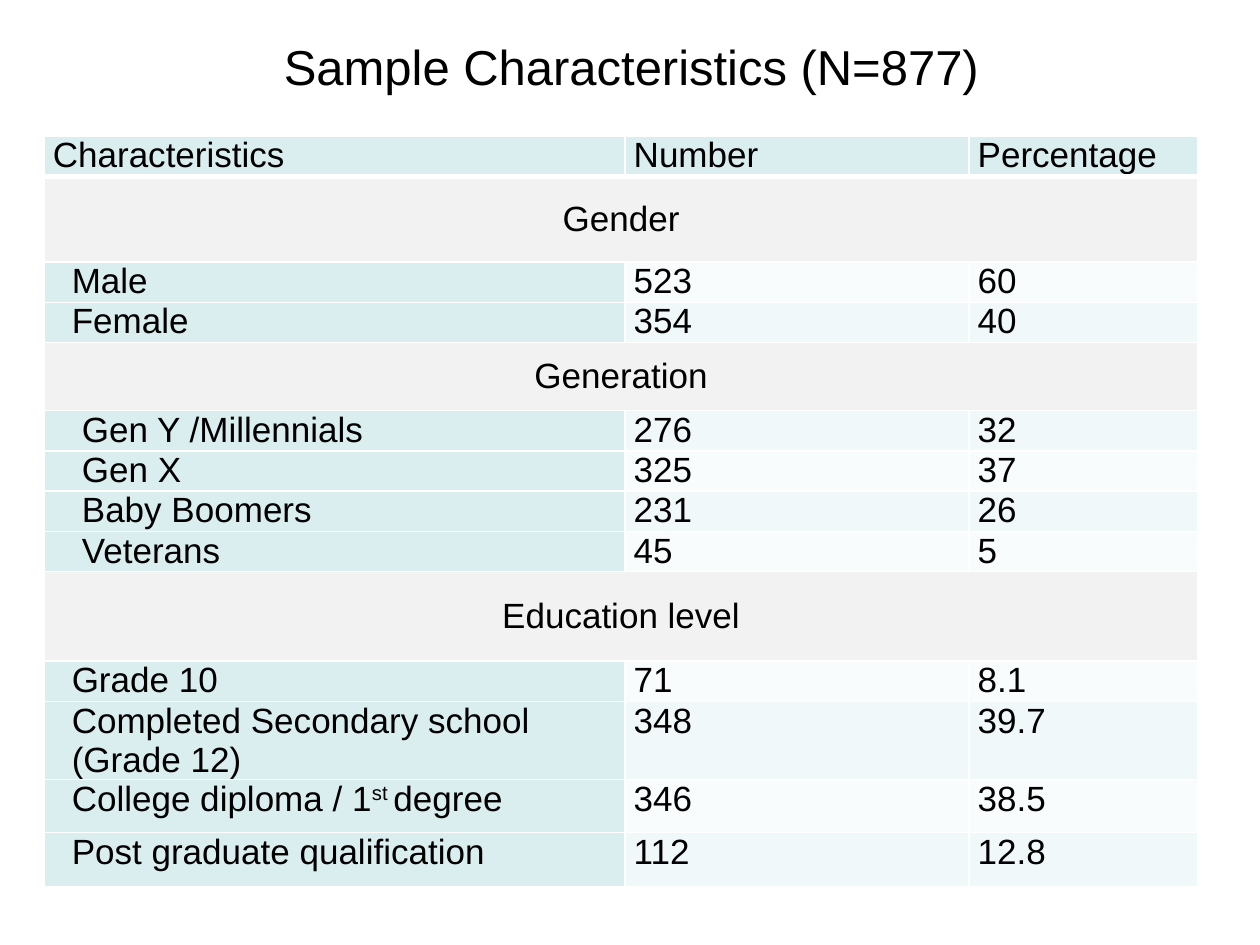
from lxml import etree
from pptx import Presentation, util as u
from pptx.dml.color import RGBColor
from pptx.enum import text
from pptx.oxml import ns

FONT = "Arial"
BLACK = RGBColor(0x00, 0x00, 0x00)
WHITE = RGBColor(0xFF, 0xFF, 0xFF)
TEAL = RGBColor(0xDA, 0xED, 0xEF)
GREY = RGBColor(0xF2, 0xF2, 0xF2)
BANDS = (RGBColor(0xF8, 0xFC, 0xFC), RGBColor(0xF1, 0xF8, 0xF9))

MARGIN = 0.07
COLUMNS = (4.61, 2.73, 1.82)
LINE = 0.32  # height of a one-line row
HEADINGS = ("Characteristics", "Number", "Percentage")

# Section: name, row height, label indent, then (label, number, percentage, height)
SECTIONS = (
    ("Gender", 0.68, 0.15, (
        ("Male", "523", "60", LINE),
        ("Female", "354", "40", LINE))),
    ("Generation", 0.54, 0.23, (
        ("Gen Y /Millennials", "276", "32", LINE),
        ("Gen X", "325", "37", LINE),
        ("Baby Boomers", "231", "26", LINE),
        ("Veterans", "45", "5", LINE))),
    ("Education level", 0.71, 0.15, (
        ("Grade 10", "71", "8.1", LINE),
        ("Completed Secondary school\n(Grade 12)", "348", "39.7", 0.61),
        ("College diploma / 1^st ^degree", "346", "38.5", 0.42),
        ("Post graduate qualification", "112", "12.8", 0.43))),
)


def style_font(font, size):
    font.name, font.size = FONT, u.Pt(size)
    font.color.rgb = BLACK


def add_borders(cell, bottom):
    """White rules on all four sides, the bottom one of the given width."""
    properties = cell._tc.get_or_add_tcPr()
    for side, width in (("L", 1), ("R", 1), ("T", 1), ("B", bottom)):
        line = etree.SubElement(properties, ns.qn(f"a:ln{side}"), w=str(u.Pt(width)))
        fill = etree.SubElement(line, ns.qn("a:solidFill"))
        etree.SubElement(fill, ns.qn("a:srgbClr"), val=str(WHITE))


def fill_cell(cell, words, color, indent=0, centred=False, bottom=1):
    """Write one cell; text between ^ marks is raised."""
    add_borders(cell, bottom)
    cell.fill.solid()
    cell.fill.fore_color.rgb = color
    cell.margin_left, cell.margin_right = u.Inches(MARGIN + indent), u.Inches(MARGIN)
    cell.margin_top = cell.margin_bottom = 0
    cell.vertical_anchor = text.MSO_ANCHOR.MIDDLE if centred else text.MSO_ANCHOR.TOP
    for number, line in enumerate(words.split("\n")):
        frame = cell.text_frame
        para = frame.add_paragraph() if number else frame.paragraphs[0]
        para.alignment = text.PP_ALIGN.CENTER if centred else text.PP_ALIGN.LEFT
        for part, piece in enumerate(line.split("^")):
            span = para.add_run()
            span.text = piece
            style_font(span.font, 20)
            if part % 2:
                span._r.get_or_add_rPr().set("baseline", "30000")


def add_title(page, left, top, width, height):
    title = page.shapes.title
    title.left, title.top = u.Inches(left), u.Inches(top)
    title.width, title.height = u.Inches(width), u.Inches(height)
    title.text_frame.text = "Sample Characteristics (N=877)"
    title.text_frame.vertical_anchor = text.MSO_ANCHOR.MIDDLE
    para = title.text_frame.paragraphs[0]
    para.alignment = text.PP_ALIGN.CENTER
    style_font(para.font, 28)


def add_sample_table(page, left, top):
    heights = [LINE]
    for _, height, _, entries in SECTIONS:
        heights += [height] + [entry[-1] for entry in entries]
    table = page.shapes.add_table(
        len(heights), len(COLUMNS), u.Inches(left), u.Inches(top),
        u.Inches(sum(COLUMNS)), u.Inches(sum(heights))).table
    for column, width in zip(table.columns, COLUMNS):
        column.width = u.Inches(width)
    for row, height in zip(table.rows, heights):
        row.height = u.Inches(height)

    # Header row
    for column, heading in enumerate(HEADINGS):
        fill_cell(table.cell(0, column), heading, TEAL, bottom=3)

    # Section bands and their entries
    row = 1
    for name, _, indent, entries in SECTIONS:
        band = table.cell(row, 0)
        band.merge(table.cell(row, len(COLUMNS) - 1))
        fill_cell(band, name, GREY, centred=True)
        for row, (label, *values, _) in enumerate(entries, row + 1):
            fill_cell(table.cell(row, 0), label, TEAL, indent)
            for column, value in enumerate(values, 1):
                fill_cell(table.cell(row, column), value, BANDS[row % 2])
        row += 1


def main():
    deck = Presentation()
    deck.slide_width, deck.slide_height = u.Inches(10), u.Inches(7.5)
    page = deck.slides.add_slide(deck.slide_layouts.get_by_name("Title Only"))
    add_title(page, 0.51, 0.21, 9, 0.63)
    add_sample_table(page, 0.35, 1.08)
    deck.save("out.pptx")


if __name__ == "__main__":
    main()
